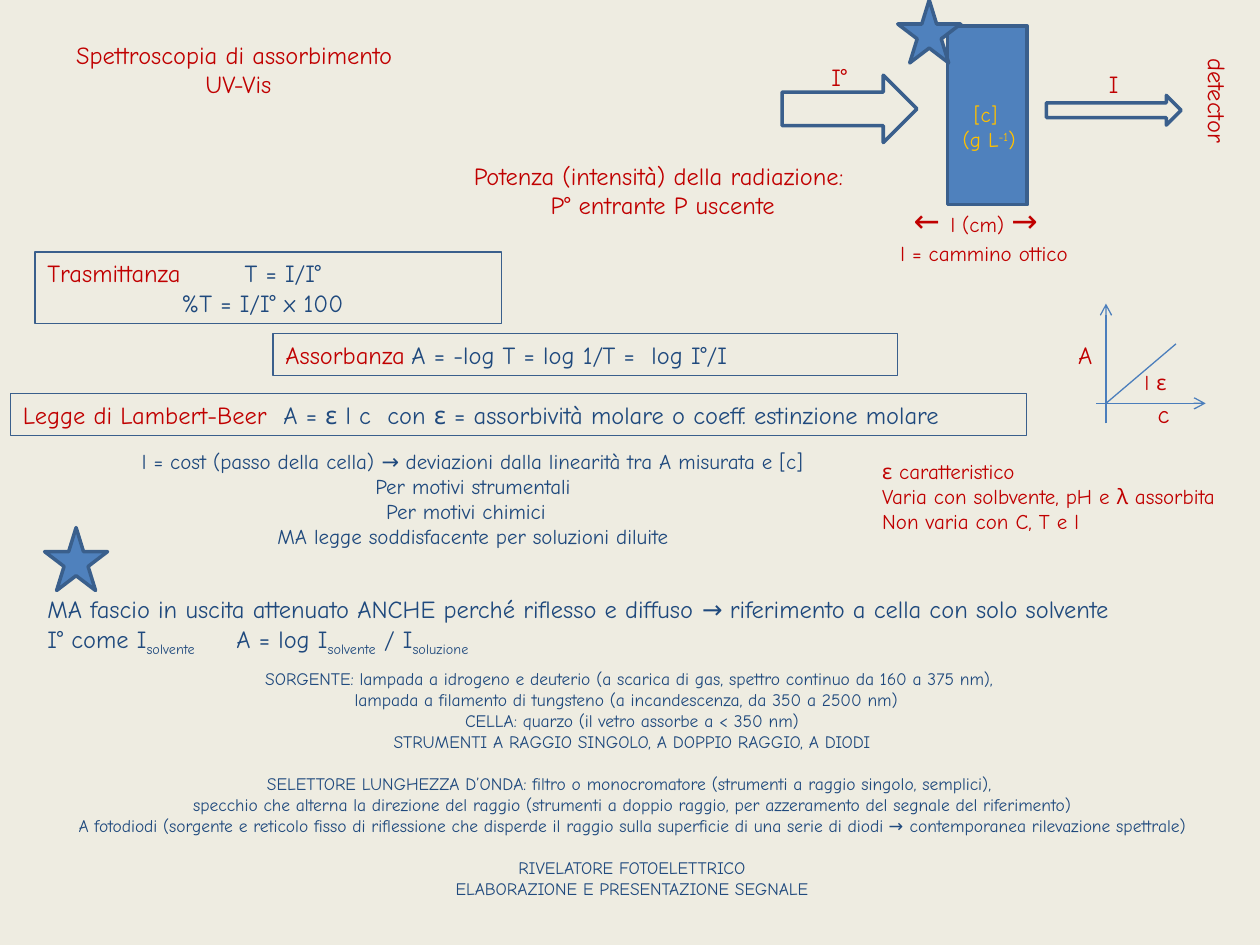
from dataclasses import dataclass

from pptx import Presentation
from pptx.dml.color import RGBColor
from pptx.enum.shapes import MSO_CONNECTOR as Connector, MSO_SHAPE as Preset
from pptx.enum.text import MSO_ANCHOR as Anchor, MSO_AUTO_SIZE as Fit, PP_ALIGN as Align
from pptx.oxml.ns import qn
from pptx.util import Pt
from lxml.etree import SubElement

FONT = "Comic Neue"
RED, NAVY, YELLOW = "C00000", "1F497D", "FFC000"
BLUE, OUTLINE, AXIS, PAPER = "4F81BD", "3A5F8C", "4B7EBC", "EEECE1"


@dataclass
class Span:
    text: str
    color: str = ""
    size: float = 0
    baseline: int = 0  # percent: positive is superscript


@dataclass
class Label:
    at: tuple[float, float, float, float]
    lines: list[str | list[Span]]
    color: str = RED
    size: float = 14
    align: Align = Align.LEFT
    wrap: bool = False
    framed: bool = False
    rotation: float = 0
    gaps: tuple[int, ...] = ()  # lines preceded by a blank line's height


def paint(color_format, color: str) -> None:
    color_format.rgb = RGBColor.from_string(color)


def place(shape, at: tuple[float, float, float, float]) -> None:
    shape.left, shape.top, shape.width, shape.height = map(Pt, at)


def write(box, label: Label) -> None:
    frame = box.text_frame
    frame.word_wrap = label.wrap
    frame.auto_size = Fit.SHAPE_TO_FIT_TEXT
    frame.vertical_anchor = Anchor.TOP
    for index, line in enumerate(label.lines):
        para = frame.paragraphs[0] if index == 0 else frame.add_paragraph()
        para.alignment = label.align
        para.space_before = Pt(label.size * 1.2 if index in label.gaps else 0)
        for span in [Span(line)] if isinstance(line, str) else line:
            run = para.add_run()
            run.text = span.text
            run.font.name = FONT
            run.font.size = Pt(span.size or label.size)
            paint(run.font.color, span.color or label.color)
            if span.baseline:
                run.font._element.set("baseline", str(span.baseline * 1000))


def add_preset(page, preset: Preset, at, fill: str = "", width: float = 2):
    shape = page.shapes.add_shape(preset, *map(Pt, at))
    shape.shadow.inherit = False
    if fill:
        shape.fill.solid()
        paint(shape.fill.fore_color, fill)
    else:
        shape.fill.background()
    paint(shape.line.color, OUTLINE)
    shape.line.width = Pt(width)
    return shape


def add_label(page, label: Label) -> None:
    if label.framed:
        box = add_preset(page, Preset.RECTANGLE, label.at, width=0.75)
    else:
        box = page.shapes.add_textbox(*map(Pt, label.at))
    write(box, label)
    place(box, label.at)
    box.rotation = label.rotation


def add_line(page, start, end, arrow: bool) -> None:
    line = page.shapes.add_connector(Connector.STRAIGHT, *map(Pt, start + end))
    paint(line.line.color, AXIS)
    line.line.width = Pt(0.75)
    if arrow:
        SubElement(line.line._get_or_add_ln(), qn("a:tailEnd"), type="arrow")
    SubElement(line._element.spPr, qn("a:effectLst"))


TITLE = Label((20, 19, 232.5, 41), ["Spettroscopia di assorbimento ", "UV-Vis"],
              align=Align.CENTER, wrap=True)

LABELS = [
    # Optical path through the cell
    Label((515, 111.5, 90.5, 29),
          [[Span("← ", size=18), Span("l (cm) "), Span("→", size=18)]], size=12),
    Label((541.5, 54.5, 47.5, 36),
          ["[c] ", [Span("(g L"), Span("-1", baseline=30), Span(")")]],
          YELLOW, 12, Align.CENTER),
    Label((252, 88.5, 253.5, 41),
          ["Potenza (intensità) della radiazione: ", "P° entrante P uscente"],
          align=Align.CENTER),
    Label((468, 32, 28, 24), ["I°"]),
    Label((626.5, 36, 22, 24), ["I"]),
    Label((659, 45.5, 73.5, 24), ["detector"], align=Align.CENTER, rotation=90),
    Label((507.5, 134, 116, 22), ["l = cammino ottico"], size=12),
    # Framed laws
    Label((20, 144, 266.5, 41),
          [[Span("Trasmittanza\t", RED), Span(" T = I/I°")], "\t\t %T = I/I° x 100"],
          NAVY, framed=True),
    Label((156, 190.5, 357, 24),
          [[Span("Assorbanza\t", RED), Span("A = -log T = log 1/T =  log I°/I")]],
          NAVY, wrap=True, framed=True),
    Label((6, 225, 580.5, 24),
          [[Span("Legge di Lambert-Beer  ", RED),
            Span("A = ε l c  con ε = assorbività molare o coeff. estinzione molare")]],
          NAVY, framed=True),
    # Remarks on the law
    Label((56, 252.5, 428.5, 65.5),
          ["l = cost (passo della cella) → deviazioni dalla linearità tra A misurata e [c]",
           "Per motivi strumentali", "Per motivi chimici  ",
           "MA legge soddisfacente per soluzioni diluite"], NAVY, 12, Align.CENTER),
    Label((497, 258.5, 223, 51),
          ["ε caratteristico", "Varia con solbvente, pH e λ assorbita",
           "Non varia con C, T e l"], size=12),
    Label((20, 336, 691, 41),
          ["MA fascio in uscita attenuato ANCHE perché riflesso e diffuso → "
           "riferimento a cella con solo solvente",
           [Span("I° come I"), Span("solvente", baseline=-25), Span(" \tA = log I"),
            Span("solvente", baseline=-25), Span(" / I"),
            Span("soluzione", baseline=-25)]], NAVY),
    # Instrument parts
    Label((2, 378, 718, 140.5),
          ["SORGENTE: lampada a idrogeno e deuterio (a scarica di gas, spettro continuo "
           "da 160 a 375 nm), ",
           "lampada a filamento di tungsteno (a incandescenza, da 350 a 2500 nm)  ",
           "CELLA: quarzo (il vetro assorbe a < 350 nm)",
           "STRUMENTI A RAGGIO SINGOLO, A DOPPIO RAGGIO, A DIODI",
           "SELETTORE LUNGHEZZA D’ONDA: filtro o monocromatore (strumenti a raggio "
           "singolo, semplici), ",
           "specchio che alterna la direzione del raggio (strumenti a doppio raggio, per "
           "azzeramento del segnale del riferimento)",
           "A fotodiodi (sorgente e reticolo fisso di riflessione che disperde il raggio "
           "sulla superficie di una serie di diodi → contemporanea rilevazione spettrale)",
           "RIVELATORE FOTOELETTRICO", "ELABORAZIONE E PRESENTAZIONE SEGNALE"],
          NAVY, 10, Align.CENTER, wrap=True, gaps=(4, 7)),
    # Graph labels
    Label((609, 191, 25, 24), ["A"]),
    Label((654.5, 224.5, 21.5, 24), ["c"]),
    Label((643, 207.5, 34.5, 22), [" l ε"], size=12),
]


def main() -> None:
    deck = Presentation()
    deck.slide_width, deck.slide_height = Pt(720), Pt(540)
    page = deck.slides.add_slide(deck.slide_layouts[5])
    page.background.fill.solid()
    paint(page.background.fill.fore_color, PAPER)

    title = page.shapes.title
    write(title, TITLE)
    place(title, TITLE.at)

    # Beam, cell and star markers
    add_preset(page, Preset.RIGHT_ARROW, (447, 43, 77, 38.5))
    add_preset(page, Preset.RIGHT_ARROW, (598, 54.5, 77, 17))
    add_preset(page, Preset.RECTANGLE, (541.5, 15, 45.5, 102), BLUE)
    for left, top in ((513, 0), (25.5, 301.5)):
        add_preset(page, Preset.STAR_5_POINT, (left, top, 36, 36), BLUE)

    for label in LABELS:
        add_label(page, label)

    # Absorbance against concentration
    origin = (632, 230.5)
    add_line(page, (632, 242), (632, 173.5), arrow=True)
    add_line(page, (626.5, 230.5), (689, 230.5), arrow=True)
    add_line(page, origin, (672, 196.5), arrow=False)

    deck.save("out.pptx")


if __name__ == "__main__":
    main()
